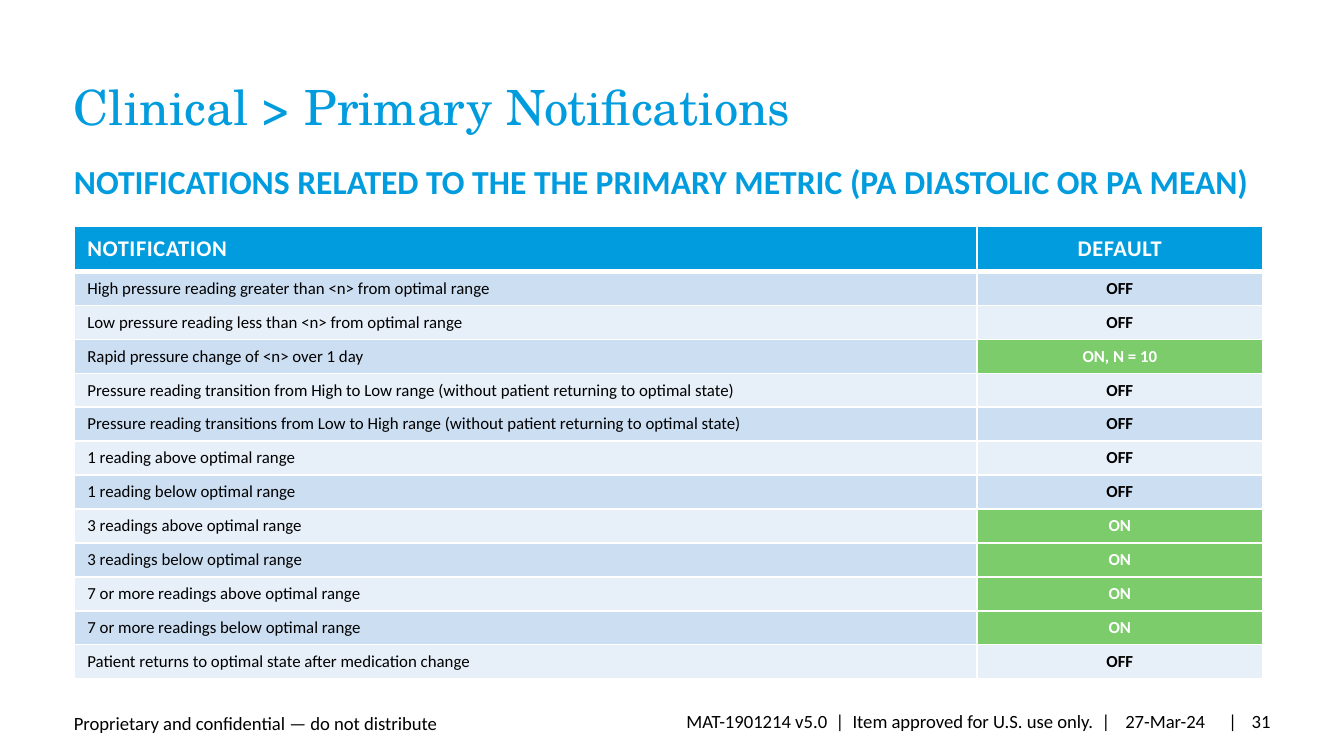
import pptx
import pptx.util
import pptx.dml.color
import pptx.enum.text
import pptx.oxml
import pptx.oxml.ns
import lxml.etree

Pt = pptx.util.Pt
RGBColor = pptx.dml.color.RGBColor
ALIGN = pptx.enum.text.PP_ALIGN
ANCHOR = pptx.enum.text.MSO_ANCHOR
qn = pptx.oxml.ns.qn

BLUE = RGBColor(0x00, 0x9C, 0xDE)
GREEN = RGBColor(0x7C, 0xCC, 0x6C)
BAND_DARK = RGBColor(0xCC, 0xDE, 0xF2)
BAND_LIGHT = RGBColor(0xE7, 0xEF, 0xF9)
WHITE = RGBColor(0xFF, 0xFF, 0xFF)
BLACK = RGBColor(0x00, 0x00, 0x00)
SANS = "Calibri"
SERIF = "TeX Gyre Schola"

TITLE = "Clinical > Primary Notifications"
SUBTITLE = "NOTIFICATIONS RELATED TO THE THE PRIMARY METRIC (PA DIASTOLIC OR PA MEAN)"
HEADINGS = ("NOTIFICATION", "DEFAULT")
NOTIFICATIONS = [
    ("High pressure reading greater than <n> from optimal range", "OFF"),
    ("Low pressure reading less than <n> from optimal range", "OFF"),
    ("Rapid pressure change of <n> over 1 day", "ON, N = 10"),
    ("Pressure reading transition from High to Low range (without patient returning to optimal state)", "OFF"),
    ("Pressure reading transitions from Low to High range (without patient returning to optimal state)", "OFF"),
    ("1 reading above optimal range", "OFF"),
    ("1 reading below optimal range", "OFF"),
    ("3 readings above optimal range", "ON"),
    ("3 readings below optimal range", "ON"),
    ("7 or more readings above optimal range", "ON"),
    ("7 or more readings below optimal range", "ON"),
    ("Patient returns to optimal state after medication change", "OFF"),
]
FOOTERS = [
    ("Proprietary and confidential — do not distribute",
     (39.6, 379.4, 240.5, 17.3), (0, 3.6, 0, 3.6), ALIGN.LEFT, ANCHOR.BOTTOM),
    ("27-Mar-24",
     (593.3, 375.5, 61.9, 21.6), (7.2, 3.6, 7.2, 3.6), ALIGN.CENTER, ANCHOR.MIDDLE),
    ("MAT-1901214 v5.0  |  Item approved for U.S. use only.  | ",
     (287.3, 375.5, 309.6, 21.6), (7.2, 3.6, 0, 3.6), ALIGN.RIGHT, ANCHOR.MIDDLE),
    ("|\t31",
     (643, 375.5, 44.6, 21.6), (15, 3.6, 0, 3.6), ALIGN.LEFT, ANCHOR.MIDDLE),
]
PAGE_TAB = 12.5

LEFT = 39.6
TABLE_TOP = 121
COLUMN_WIDTHS = (483.8, 153)
HEADING_HEIGHT = 24.5
ROW_HEIGHT = 18.17


def write(paragraph, text, size, color, bold=False, font=SANS, align=ALIGN.LEFT):
    paragraph.alignment = align
    run = paragraph.add_run()
    run.text = text
    run.font.name = font
    run.font.size = Pt(size)
    run.font.bold = bold
    run.font.color.rgb = color
    return run


def frame_text(shape, box, insets, anchor):
    shape.left, shape.top, shape.width, shape.height = map(Pt, box)
    frame = shape.text_frame
    frame.word_wrap = True
    frame.auto_size = pptx.enum.text.MSO_AUTO_SIZE.NONE
    frame.vertical_anchor = anchor
    (frame.margin_left, frame.margin_top,
     frame.margin_right, frame.margin_bottom) = map(Pt, insets)
    return frame.paragraphs[0]


def add_text(slide, box, insets, anchor):
    return frame_text(slide.shapes.add_textbox(0, 0, 0, 0), box, insets, anchor)


def set_borders(cell, top, bottom):
    properties = cell._tc.get_or_add_tcPr()
    widths = (("a:lnL", 1), ("a:lnR", 1), ("a:lnT", top), ("a:lnB", bottom))
    for position, (tag, width) in enumerate(widths):
        line = lxml.etree.Element(qn(tag), w=str(Pt(width)))
        fill = lxml.etree.SubElement(line, qn("a:solidFill"))
        lxml.etree.SubElement(fill, qn("a:srgbClr"), val=str(WHITE))
        properties.insert(position, line)


def fill_cell(cell, text, fill, size, color, bold, align, top=1, bottom=1):
    cell.fill.solid()
    cell.fill.fore_color.rgb = fill
    cell.vertical_anchor = ANCHOR.MIDDLE
    set_borders(cell, top, bottom)
    return write(cell.text_frame.paragraphs[0], text, size, color, bold, align=align)


def add_notifications(slide):
    height = HEADING_HEIGHT + ROW_HEIGHT * len(NOTIFICATIONS)
    table = slide.shapes.add_table(
        len(NOTIFICATIONS) + 1, len(HEADINGS), Pt(LEFT), Pt(TABLE_TOP),
        Pt(sum(COLUMN_WIDTHS)), Pt(height)).table
    for column, width in zip(table.columns, COLUMN_WIDTHS):
        column.width = Pt(width)
    for row in table.rows:
        row.height = Pt(ROW_HEIGHT)
    table.rows[0].height = Pt(HEADING_HEIGHT)

    for column, (heading, align) in enumerate(zip(HEADINGS, (ALIGN.LEFT, ALIGN.CENTER))):
        cell = table.cell(0, column)
        cell.margin_top = cell.margin_bottom = Pt(2.9)
        run = fill_cell(cell, heading, BLUE, 12, WHITE, True, align, bottom=3)
        run._r.get_or_add_rPr().set("spc", "30")

    for row, (notification, default) in enumerate(NOTIFICATIONS, 1):
        band = BAND_DARK if row % 2 else BAND_LIGHT
        is_on = default.startswith("ON")
        top = 3 if row == 1 else 1
        fill_cell(table.cell(row, 0), notification, band, 9, BLACK, False, ALIGN.LEFT, top)
        fill_cell(table.cell(row, 1), default, GREEN if is_on else band, 9,
                  WHITE if is_on else BLACK, True, ALIGN.CENTER, top)


def add_footers(slide):
    for text, box, insets, align, anchor in FOOTERS:
        paragraph = add_text(slide, box, insets, anchor)
        write(paragraph, text, 10, BLACK, align=align)
        if "\t" in text:
            tabs = lxml.etree.SubElement(paragraph._p.get_or_add_pPr(), qn("a:tabLst"))
            lxml.etree.SubElement(tabs, qn("a:tab"), pos=str(Pt(PAGE_TAB)), algn="l")


def main():
    deck = pptx.Presentation()
    deck.slide_width, deck.slide_height = Pt(720), Pt(405)
    slide = deck.slides.add_slide(deck.slide_layouts[5])

    title = frame_text(slide.shapes.title, (LEFT, 44.6, 640.8, 31),
                       (0, 0, 7.2, 3.6), ANCHOR.TOP)
    title.line_spacing = 0.9
    write(title, TITLE, 26, BLUE, font=SERIF)

    subtitle = add_text(slide, (LEFT, 86.4, 641.5, 31), (0, 0, 7.2, 3.6), ANCHOR.TOP)
    subtitle.space_before = Pt(6)
    write(subtitle, SUBTITLE, 18, BLUE, bold=True)

    add_notifications(slide)
    add_footers(slide)
    deck.save("out.pptx")


if __name__ == "__main__":
    main()
